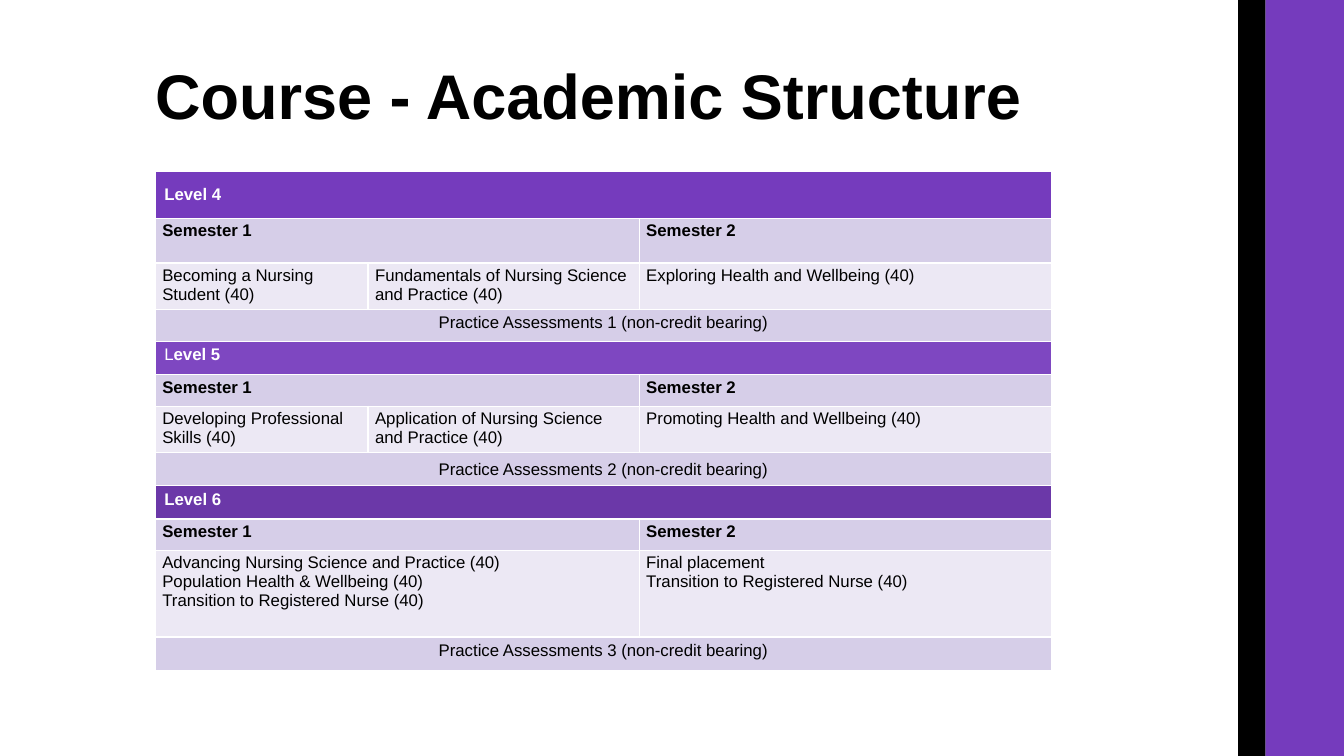
from dataclasses import dataclass

from pptx import Presentation
from pptx.dml.color import RGBColor
from pptx.enum.shapes import MSO_SHAPE
from pptx.enum.text import MSO_ANCHOR, PP_ALIGN
from pptx.util import Emu, Pt

RECTANGLE = MSO_SHAPE.RECTANGLE
TOP, MIDDLE = MSO_ANCHOR.TOP, MSO_ANCHOR.MIDDLE
LEFT, CENTER = PP_ALIGN.LEFT, PP_ALIGN.CENTER
EMU_PER_PX = 9144


@dataclass(frozen=True)
class Theme:
    font: str = "Arial"
    title_size: int = 45
    table_size: int = 12
    white: str = "FFFFFF"
    black: str = "000000"
    purple: str = "753BBD"
    level_5: str = "7E47C1"
    level_6: str = "6B38A8"
    band: str = "D6CEE8"
    module: str = "ECE8F4"


THEME = Theme()
COLUMN_WIDTHS = (211, 269, 409)
WIDE_INSETS = (9, 4)
NARROW_INSETS = (7, 3)


def px(length):
    return Emu(length * EMU_PER_PX)


def rgb(color):
    return RGBColor.from_string(color)


def write_spans(para, spans, size=THEME.table_size, color=THEME.black, align=LEFT):
    para.alignment = align
    for text, bold in spans:
        span = para.add_run()
        span.text = text
        span.font.name = THEME.font
        span.font.size = Pt(size)
        span.font.bold = bold
        span.font.color.rgb = rgb(color)


def add_bar(page, left, width, color):
    bar = page.shapes.add_shape(RECTANGLE, px(left), 0, px(width), px(750))
    bar.shadow.inherit = False
    bar.fill.solid()
    bar.fill.fore_color.rgb = rgb(color)
    bar.line.fill.background()


def add_title(page, text):
    box = page.shapes.add_textbox(px(144), px(16), px(1000), px(165))
    frame = box.text_frame
    frame.word_wrap = True
    frame.vertical_anchor = MIDDLE
    para = frame.paragraphs[0]
    para.line_spacing = 0.9
    para.space_after = Pt(4.5)
    write_spans(para, [(text, True)], size=THEME.title_size)


def fill_cell(cell, lines, fill, insets=NARROW_INSETS, anchor=TOP, **text_format):
    cell.margin_left = cell.margin_right = px(insets[0])
    cell.margin_top = cell.margin_bottom = px(insets[1])
    cell.vertical_anchor = anchor
    cell.fill.solid()
    cell.fill.fore_color.rgb = rgb(fill)
    frame = cell.text_frame
    for index, spans in enumerate(lines):
        para = frame.add_paragraph() if index else frame.paragraphs[0]
        write_spans(para, spans, **text_format)


def merge_cells(table, row, first, last):
    cell = table.cell(row, first)
    if last > first:
        cell.merge(table.cell(row, last))
    return cell


def add_level(table, first_row, heading, fill, modules, practice,
              heading_anchor=TOP, practice_anchor=TOP):
    fill_cell(merge_cells(table, first_row, 0, 2), [heading], fill,
              insets=WIDE_INSETS, anchor=heading_anchor, color=THEME.white)
    for name, first, last in (("Semester 1", 0, 1), ("Semester 2", 2, 2)):
        fill_cell(merge_cells(table, first_row + 1, first, last),
                  [[(name, True)]], THEME.band)
    for first, last, lines in modules:
        fill_cell(merge_cells(table, first_row + 2, first, last),
                  [[(line, False)] for line in lines], THEME.module)
    fill_cell(merge_cells(table, first_row + 3, 0, 2), [[(practice, False)]],
              THEME.band, insets=WIDE_INSETS, anchor=practice_anchor, align=CENTER)


def add_structure_table(page):
    row_heights = (47, 44, 46, 32, 33, 31, 46, 33, 33, 31, 86, 33)
    table = page.shapes.add_table(
        len(row_heights), len(COLUMN_WIDTHS), px(154), px(170),
        px(sum(COLUMN_WIDTHS)), px(sum(row_heights))).table
    table.horz_banding = False
    for column, width in zip(table.columns, COLUMN_WIDTHS):
        column.width = px(width)
    for row, height in zip(table.rows, row_heights):
        row.height = px(height)

    add_level(table, 0, [("Level 4", True)], THEME.purple, [
        (0, 0, ["Becoming a Nursing Student (40)"]),
        (1, 1, ["Fundamentals of Nursing Science and Practice (40)"]),
        (2, 2, ["Exploring Health and Wellbeing (40)"]),
    ], "Practice Assessments 1 (non-credit bearing)", heading_anchor=MIDDLE)
    add_level(table, 4, [("L", False), ("evel 5", True)], THEME.level_5, [
        (0, 0, ["Developing Professional Skills (40)"]),
        (1, 1, ["Application of Nursing Science and Practice (40)"]),
        (2, 2, ["Promoting Health and Wellbeing (40)"]),
    ], "Practice Assessments 2 (non-credit bearing)", practice_anchor=MIDDLE)
    add_level(table, 8, [("Level 6", True)], THEME.level_6, [
        (0, 1, ["Advancing Nursing Science and Practice (40)",
                "Population Health & Wellbeing (40)",
                "Transition to Registered Nurse (40)"]),
        (2, 2, ["Final placement", "Transition to Registered Nurse (40)"]),
    ], "Practice Assessments 3 (non-credit bearing)")


def main():
    deck = Presentation()
    deck.slide_width, deck.slide_height = px(1333), px(750)
    page = deck.slides.add_slide(deck.slide_layouts[6])
    add_bar(page, 1255, 78, THEME.purple)
    add_bar(page, 1228, 27, THEME.black)
    add_title(page, "Course - Academic Structure")
    add_structure_table(page)
    deck.save("out.pptx")


if __name__ == "__main__":
    main()
